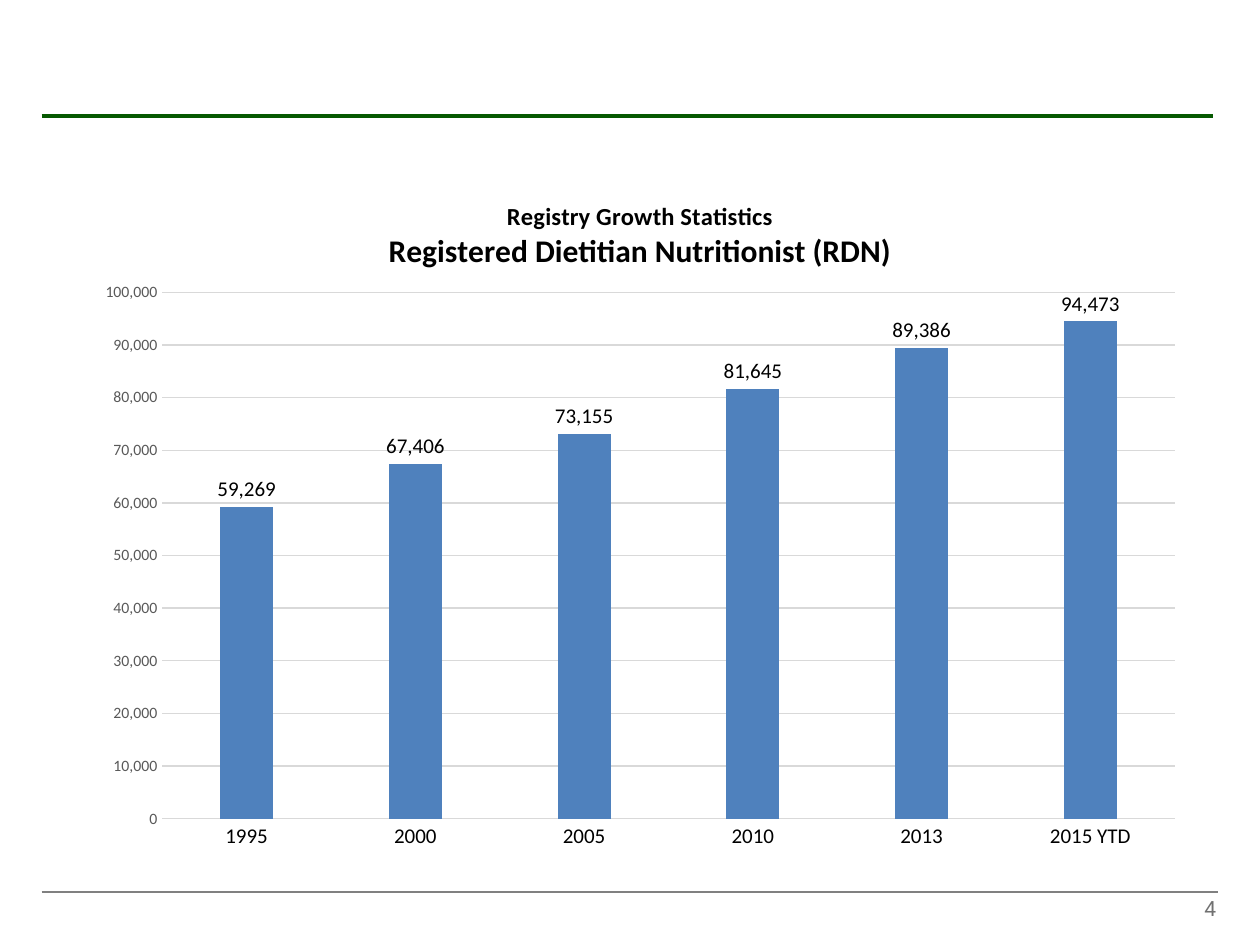
from pptx import Presentation
from pptx.chart.data import CategoryChartData
from pptx.dml.color import RGBColor
from pptx.enum.chart import XL_CHART_TYPE, XL_LABEL_POSITION, XL_TICK_MARK
from pptx.enum.shapes import MSO_CONNECTOR
from pptx.enum.text import MSO_ANCHOR, PP_ALIGN
from pptx.oxml import parse_xml
from pptx.oxml.ns import nsdecls, qn
from pptx.util import Inches, Pt

COLUMN = XL_CHART_TYPE.COLUMN_CLUSTERED
ABOVE = XL_LABEL_POSITION.OUTSIDE_END
NO_TICK = XL_TICK_MARK.NONE
STRAIGHT = MSO_CONNECTOR.STRAIGHT
MIDDLE = MSO_ANCHOR.MIDDLE
RIGHT = PP_ALIGN.RIGHT

COLORS = {
    "black": "000000", "green": "065901", "rule": "808080",
    "number": "717171", "grid": "D9D9D9", "axis": "595959", "bar": "4F81BD",
}
COUNTS = {
    "1995": 59269, "2000": 67406, "2005": 73155,
    "2010": 81645, "2013": 89386, "2015 YTD": 94473,
}
TITLE = [("Registry Growth Statistics", 14),
         ("Registered Dietitian Nutritionist (RDN)", 18)]


def color(name):
    return RGBColor.from_string(COLORS[name])


def set_font(font, size, name, face="Calibri", bold=False):
    font.size = Pt(size)
    font.name = face
    font.bold = bold
    font.color.rgb = color(name)


def set_line(line, name, width):
    line.color.rgb = color(name)
    line.width = Pt(width)


def add_rule(slide, left, right, y, name, width):
    rule = slide.shapes.add_connector(
        STRAIGHT, Inches(left), Inches(y), Inches(right), Inches(y))
    set_line(rule.line, name, width)
    rule.element.spPr.append(parse_xml(f"<a:effectLst {nsdecls('a')}/>"))


def add_number(slide, text):
    box = slide.shapes.add_textbox(
        Inches(7.42), Inches(7.08), Inches(2.33), Inches(0.25))
    frame = box.text_frame
    frame.word_wrap = True
    frame.vertical_anchor = MIDDLE
    para = frame.paragraphs[0]
    para.alignment = RIGHT
    run = para.add_run()
    run.text = text
    set_font(run.font, 12, "number", "Roboto")


def make_layout(target, **parts):
    """Manual layout in fractions of the chart area."""
    inner = f'<c:layoutTarget val="{target}"/>' if target else ""
    modes = "".join(f'<c:{k}Mode val="edge"/>' for k in "xy")
    sizes = "".join(f'<c:{k} val="{v}"/>' for k, v in parts.items())
    return parse_xml(f"<c:layout {nsdecls('c')}><c:manualLayout>"
                     f"{inner}{modes}{sizes}</c:manualLayout></c:layout>")


def drop_layout(parent):
    for old in parent.findall(qn("c:layout")):
        parent.remove(old)


def add_title(chart):
    title = chart.chart_title
    frame = title.text_frame
    for i, (text, size) in enumerate(TITLE):
        para = frame.add_paragraph() if i else frame.paragraphs[0]
        run = para.add_run()
        run.text = text
        set_font(run.font, size, "black", bold=True)
    title.include_in_layout = False
    node = chart.element.find(".//" + qn("c:title"))
    drop_layout(node)
    node.find(qn("c:tx")).addnext(make_layout("", x=0.27, y=0.04))


def style_axes(chart):
    cats, vals = chart.category_axis, chart.value_axis
    for axis, size, name in ((cats, 12, "black"), (vals, 9, "axis")):
        axis.major_tick_mark = axis.minor_tick_mark = NO_TICK
        set_font(axis.tick_labels.font, size, name)
    set_line(cats.format.line, "grid", 0.75)
    vals.format.line.fill.background()
    set_line(vals.major_gridlines.format.line, "grid", 0.75)
    vals.minimum_scale, vals.maximum_scale = 0, 100000
    vals.major_unit = 10000
    vals.tick_labels.number_format = "#,##0"
    vals.tick_labels.number_format_is_linked = False


def style_bars(plot):
    plot.gap_width, plot.overlap = 219, -27
    plot.vary_by_categories = False
    bars = plot.series[0]
    bars.format.fill.solid()
    bars.format.fill.fore_color.rgb = color("bar")
    labels = bars.data_labels
    labels.show_value = True
    labels.position = ABOVE
    labels.number_format = "#,##0"
    labels.number_format_is_linked = False
    set_font(labels.font, 12, "black")


def add_growth(slide):
    data = CategoryChartData(number_format="#,##0")
    data.categories = list(COUNTS)
    data.add_series("Series 1", list(COUNTS.values()))
    chart = slide.shapes.add_chart(
        COLUMN, Inches(0.67), Inches(1.33), Inches(8.83), Inches(5.5),
        data).chart
    set_font(chart.font, 10, "black")
    chart.has_legend = False
    add_title(chart)
    style_axes(chart)
    style_bars(chart.plots[0])
    area = chart.element.find(".//" + qn("c:plotArea"))
    drop_layout(area)
    area.insert(0, make_layout("inner", x=0.07, y=0.18, w=0.91, h=0.76))


def main():
    deck = Presentation()
    deck.slide_width, deck.slide_height = Inches(10), Inches(7.5)
    slide = deck.slides.add_slide(deck.slide_layouts[6])
    # Frame: footer rule, header rule, page number
    add_rule(slide, 0.33, 9.67, 7.08, "rule", 1)
    add_rule(slide, 0.33, 9.63, 0.92, "green", 2.25)
    add_number(slide, "4")
    # Registry growth chart
    add_growth(slide)
    deck.save("out.pptx")


if __name__ == "__main__":
    main()
